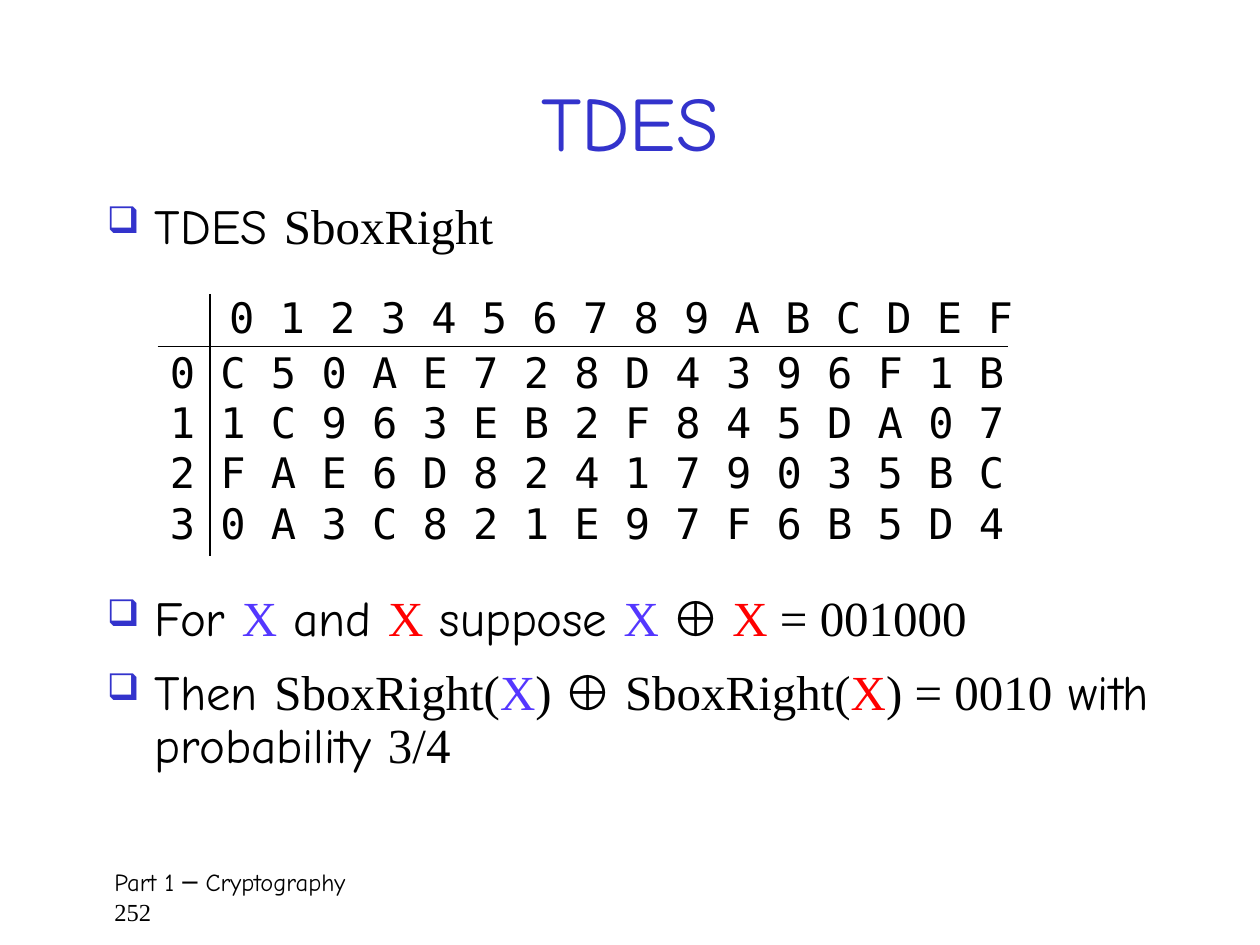
from lxml.etree import SubElement
from pptx import Presentation
from pptx.dml.color import RGBColor
from pptx.enum.shapes import MSO_CONNECTOR
from pptx.enum.text import MSO_ANCHOR, PP_ALIGN
from pptx.oxml.ns import qn
from pptx.util import Inches, Pt

COLORS = {"ink": "000000", "title": "3333CC", "blue": "5437FF", "red": "FF0000"}
COMIC, TIMES, MONO = "Comic Neue", "Times New Roman", "DejaVu Sans Mono"
UNIT = Inches(1) // 12  # the grid has 120 columns and 90 rows

deck = Presentation()
deck.slide_width, deck.slide_height = 120 * UNIT, 90 * UNIT
slide = deck.slides.add_slide(deck.slide_layouts[6])


def add_box(col, row, cols, rows):
    """Add a wrapping text box on the grid and return its text frame."""
    box = slide.shapes.add_textbox(col * UNIT, row * UNIT, cols * UNIT, rows * UNIT)
    box.text_frame.word_wrap = True
    return box.text_frame


def fill_line(frame, first, runs, size, indent=0, bullet=False):
    """Write (text, font, colour) runs into the first or a new paragraph."""
    para = frame.paragraphs[0] if first else frame.add_paragraph()
    for text, font, color in runs:
        run = para.add_run()
        run.text = text
        run.font.name, run.font.size = font, Pt(size)
        run.font.color.rgb = RGBColor.from_string(COLORS[color])
    props = para._p.get_or_add_pPr()
    props.set("marL", str(Inches(indent)))
    if bullet:
        props.set("indent", str(-Inches(indent)))
        para.space_before = Pt(6)
        tint = SubElement(props, qn("a:buClr"))
        SubElement(tint, qn("a:srgbClr"), val=COLORS["title"])
        SubElement(props, qn("a:buSzPct"), val="75000")
        SubElement(props, qn("a:buChar"), char="❑")
    return para


# Footer
foot = add_box(9, 82, 103, 6)
fill_line(foot, True, [("Part 1 ─ Cryptography", COMIC, "ink")], 14, 0.06)
fill_line(foot, False, [("252", TIMES, "ink")], 14, 0.06)

# Title
head = add_box(9, 4, 102, 15)
head.vertical_anchor = MSO_ANCHOR.MIDDLE
fill_line(head, True, [("TDES", COMIC, "title")], 44).alignment = PP_ALIGN.CENTER

# Top bullet
lead = add_box(9, 18, 102, 10)
fill_line(lead, True, [("TDES ", COMIC, "ink"), ("SboxRight", TIMES, "ink")],
          28, 0.38, True)

# S-box grid: the header is set in past the row labels
grid = add_box(15, 27, 90, 26)
grid.margin_top = Inches(0.06)
top = fill_line(grid, True, [(" ".join("0123456789ABCDEF"), MONO, "ink")], 24, 0.47)
top.space_after = Pt(2.7)
for label, row in enumerate(["C50AE728D4396F1B", "1C963EB2F845DA07",
                             "FAE6D824179035BC", "0A3C821E97F6B5D4"]):
    fill_line(grid, False, [(" ".join(f"{label}{row}"), MONO, "ink")], 24)

# Rules beside the labels and below the header
for ends in [(20, 28, 20, 53), (15, 33, 96, 33)]:
    rule = slide.shapes.add_connector(MSO_CONNECTOR.STRAIGHT, *(n * UNIT for n in ends))
    rule.line.width = Pt(0.75)
    rule.line.color.rgb = RGBColor.from_string(COLORS["ink"])
    SubElement(rule._element.spPr, qn("a:effectLst"))

# Closing bullets
points = [
    [("For ", COMIC, "ink"), ("X", TIMES, "blue"), (" and ", COMIC, "ink"),
     ("X", TIMES, "red"), (" suppose ", COMIC, "ink"), ("X ", TIMES, "blue"),
     ("⊕ ", TIMES, "ink"), ("X", TIMES, "red"), (" = 001000", TIMES, "ink")],
    [("Then ", COMIC, "ink"), ("SboxRight(", TIMES, "ink"), ("X", TIMES, "blue"),
     (") ⊕ SboxRight(", TIMES, "ink"), ("X", TIMES, "red"), (") = 0010", TIMES, "ink"),
     (" with probability ", COMIC, "ink"), ("3/4", TIMES, "ink")],
]
body = add_box(9, 56, 102, 22)
for n, runs in enumerate(points):
    para = fill_line(body, n == 0, runs, 28, 0.38, True)
    para.line_spacing, para.space_after = 0.9, Pt(6)

deck.save("out.pptx")
